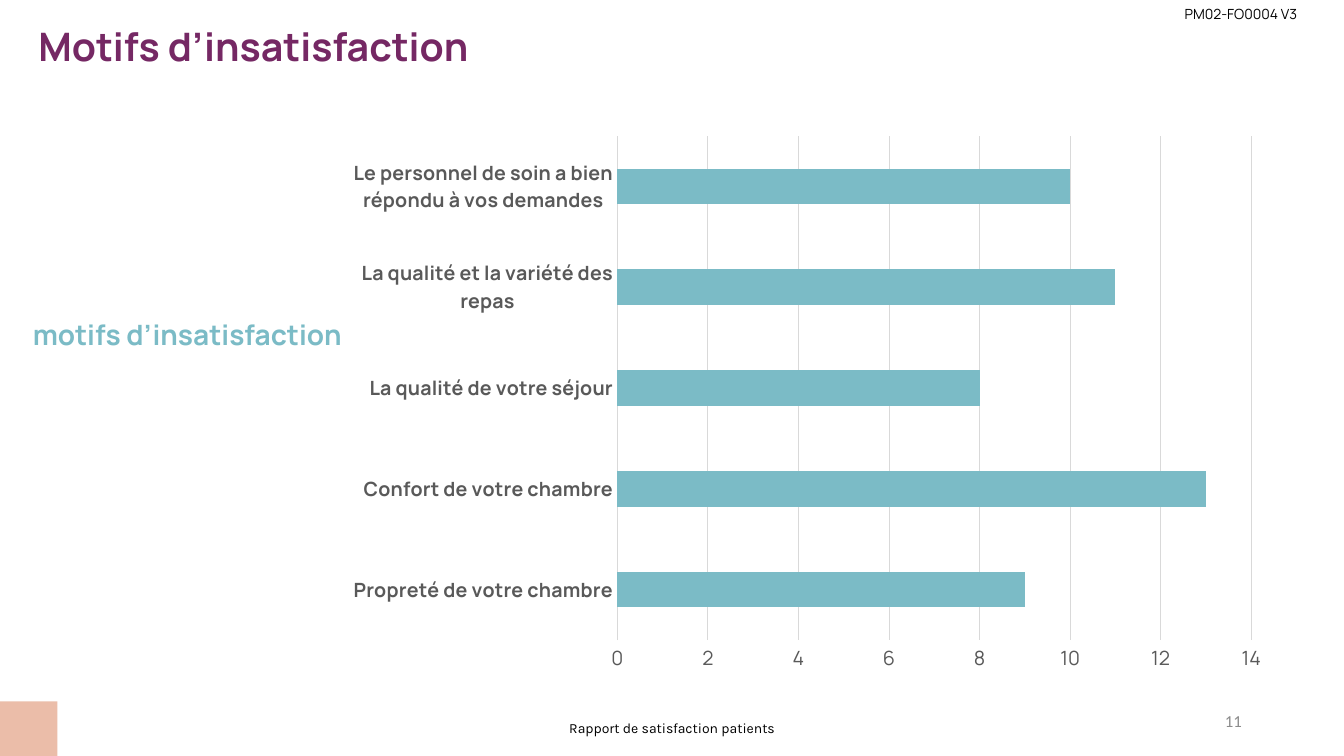
"""Build the slide on reasons for patient dissatisfaction."""
from dataclasses import dataclass

from pptx import Presentation
from pptx.chart.data import CategoryChartData
from pptx.dml.color import RGBColor
from pptx.enum.chart import XL_CHART_TYPE as ChartType, XL_TICK_MARK as Tick
from pptx.enum.shapes import MSO_SHAPE as Preset
from pptx.enum.text import MSO_ANCHOR as Anchor, PP_ALIGN as Align
from pptx.util import Pt

PURPLE, TEAL, PEACH = "752864", "7BBBC6", "EBBDA9"
BLACK, GREY, AXIS_GREY, RULE_GREY = "000000", "8C8C8C", "595959", "D9D9D9"
HEADING_FONT = "Manrope"

REASONS = {
    "Propreté de votre chambre": 9,
    "Confort de votre chambre": 13,
    "La qualité de votre séjour": 8,
    "La qualité et la variété des repas": 11,
    "Le personnel de soin a bien répondu à vos demandes": 10,
}


@dataclass(frozen=True)
class Label:
    text: str
    box: tuple[float, float, float, float]
    size: float
    color: str
    font: str = HEADING_FONT
    bold: bool = False
    align: Align = Align.CENTER
    anchor: Anchor = Anchor.TOP
    inset: bool = True


LABELS = [
    Label("Motifs d’insatisfaction", (27.4, 15.8, 817.2, 33.8), 28, PURPLE,
          bold=True, align=Align.LEFT, anchor=Anchor.MIDDLE, inset=False),
    Label("motifs d’insatisfaction", (15.8, 226.8, 236.2, 24.5), 20, TEAL,
          bold=True, inset=False),
    Label("Rapport de satisfaction patients", (240, 510.5, 480, 19.4), 10, BLACK,
          font="Karla"),
    Label("11", (678.2, 500.4, 216, 28.8), 12, GREY, font="Calibri",
          align=Align.RIGHT, anchor=Anchor.MIDDLE),
    Label("PM02-FO0004 V3", (786.2, 0.7, 200.2, 19.4), 10, BLACK),
]


def rgb(hex_color: str) -> RGBColor:
    """Turn a hex string into a colour."""
    return RGBColor.from_string(hex_color)


def style_font(font, name: str, size: float, color: str, bold: bool = False) -> None:
    """Set the typeface, size, colour and weight of a font."""
    font.name, font.size, font.bold = name, Pt(size), bold
    font.color.rgb = rgb(color)


def draw_label(slide, label: Label) -> None:
    """Place one text box."""
    frame = slide.shapes.add_textbox(*map(Pt, label.box)).text_frame
    frame.word_wrap = True
    frame.vertical_anchor = label.anchor
    if not label.inset:
        frame.margin_left = frame.margin_right = Pt(0)
        frame.margin_top = frame.margin_bottom = Pt(0)
    paragraph = frame.paragraphs[0]
    paragraph.alignment = label.align
    run = paragraph.add_run()
    run.text = label.text
    style_font(run.font, label.font, label.size, label.color, label.bold)


def draw_corner(slide) -> None:
    """Place the coloured block in the bottom left corner."""
    corner = slide.shapes.add_shape(Preset.RECTANGLE, Pt(0), Pt(501), Pt(41), Pt(39))
    corner.shadow.inherit = False
    corner.fill.solid()
    corner.fill.fore_color.rgb = rgb(PEACH)
    corner.line.fill.background()


def draw_reasons_chart(slide) -> None:
    """Place the bar chart of reasons."""
    reasons = CategoryChartData()
    reasons.categories = list(REASONS)
    reasons.add_series("Series 1", list(REASONS.values()))
    chart = slide.shapes.add_chart(
        ChartType.BAR_STACKED, Pt(239), Pt(89.3), Pt(675.4), Pt(398.2), reasons).chart
    chart.has_legend = chart.has_title = False
    style_font(chart.font, HEADING_FONT, 14, BLACK)

    plot = chart.plots[0]
    plot.gap_width, plot.overlap, plot.vary_by_categories = 182, 100, False
    bars = plot.series[0].format.fill
    bars.solid()
    bars.fore_color.rgb = rgb(TEAL)

    reason_axis, count_axis = chart.category_axis, chart.value_axis
    for axis in (reason_axis, count_axis):
        axis.major_tick_mark = axis.minor_tick_mark = Tick.NONE
        style_font(axis.tick_labels.font, HEADING_FONT, 14, AXIS_GREY,
                   bold=axis is reason_axis)
    reason_axis.has_major_gridlines = False
    count_axis.has_major_gridlines = True
    count_axis.minimum_scale, count_axis.maximum_scale = 0, 14
    count_axis.major_unit = 2
    count_axis.format.line.fill.background()
    for rule in (reason_axis.format.line, count_axis.major_gridlines.format.line):
        rule.color.rgb = rgb(RULE_GREY)
        rule.width = Pt(0.75)


def main() -> None:
    """Build and save the slide."""
    deck = Presentation()
    deck.slide_width, deck.slide_height = Pt(960), Pt(540)
    slide = deck.slides.add_slide(deck.slide_layouts[6])
    draw_corner(slide)
    draw_reasons_chart(slide)
    for label in LABELS:
        draw_label(slide, label)
    deck.save("out.pptx")


if __name__ == "__main__":
    main()
